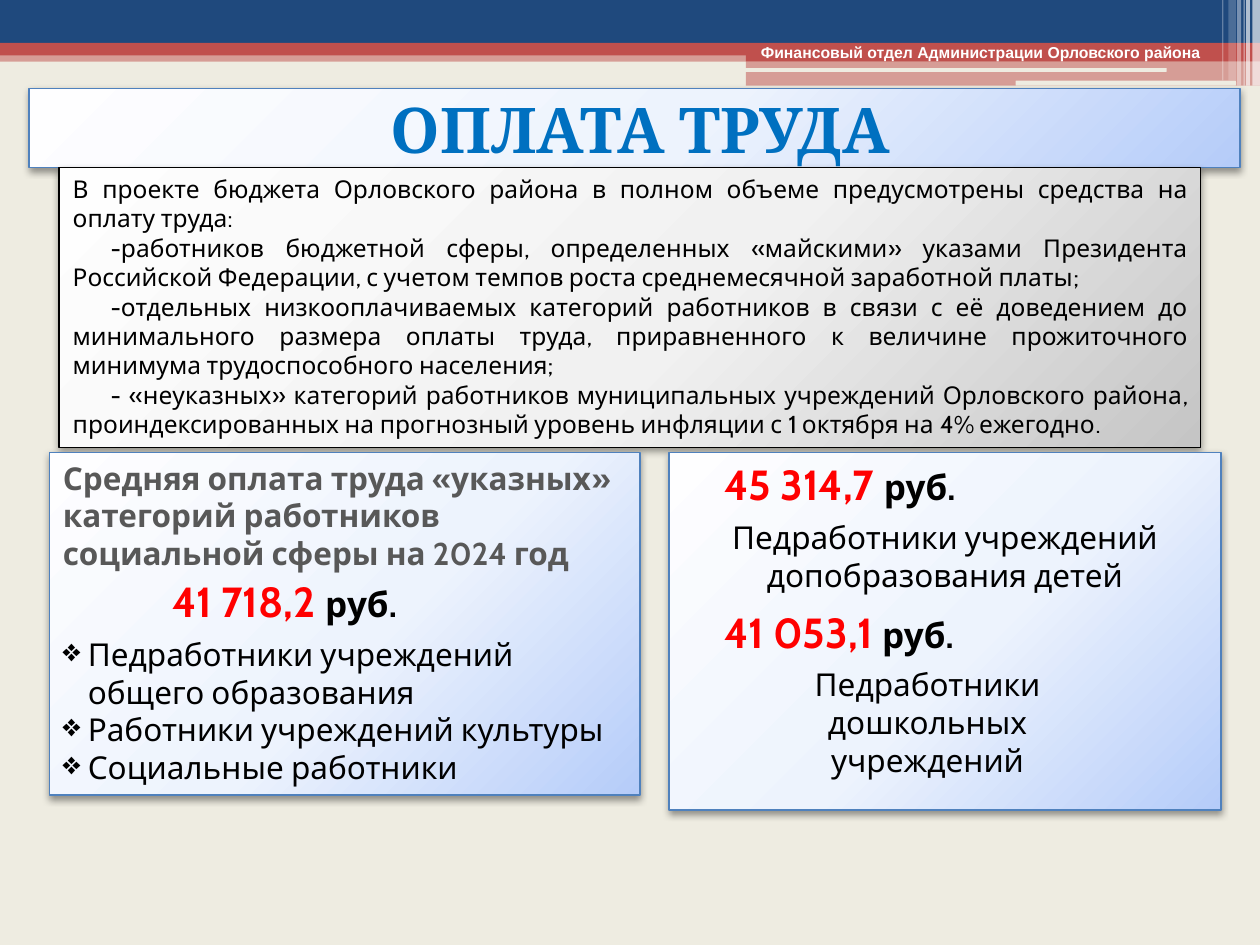
"""Build the slide on wages in the district budget."""
from lxml.etree import SubElement
from pptx import Presentation
from pptx.dml.color import RGBColor
from pptx.enum.shapes import MSO_SHAPE
from pptx.enum.text import MSO_ANCHOR, PP_ALIGN
from pptx.oxml import parse_xml
from pptx.oxml.ns import nsdecls, qn
from pptx.util import Pt

paint = RGBColor.from_string


def write(frame, text, size=18, color="000000", bold=False, font="Cabin",
          align=PP_ALIGN.LEFT, left=0, right=0, indent=0, before=0, bullet=None, tail=()):
    """Add a paragraph; tail holds further (text, size, color) spans."""
    para = frame.paragraphs[0] if not frame.text else frame.add_paragraph()
    para.alignment = align
    if before:
        para.space_before = Pt(before)
    props = para._p.get_or_add_pPr()
    for name, length in (("marL", left), ("marR", right), ("indent", indent)):
        props.set(name, str(Pt(length)))
    if bullet:
        SubElement(props, qn("a:buChar")).set("char", bullet)
    for words, points, shade in ((text, size, color), *tail):
        span = para.add_run()
        span.text = words
        span.font.name = font
        span.font.size = Pt(points)
        span.font.bold = bold
        span.font.color.rgb = paint(shade)


def add_panel(page, left, top, width, height, stops, outline):
    """Add a rectangle with a radial gradient and a soft shadow."""
    panel = page.shapes.add_shape(
        MSO_SHAPE.RECTANGLE, Pt(left), Pt(top), Pt(width), Pt(height))
    panel.line.color.rgb = paint(outline)
    panel.line.width = Pt(0.75)
    panel.shadow.inherit = False
    colors = "".join(
        f'<a:gs pos="{place * 1000}"><a:srgbClr val="{shade}"/></a:gs>'
        for place, shade in zip((0, 55, 100), stops))
    panel._element.spPr.find(qn("a:prstGeom")).addnext(parse_xml(
        f'<a:gradFill {nsdecls("a")} rotWithShape="1"><a:gsLst>{colors}</a:gsLst>'
        '<a:path path="circle"><a:fillToRect l="-40000" t="-90000" r="140000" b="190000"/>'
        '</a:path></a:gradFill>'))
    panel._element.spPr.find(qn("a:effectLst")).append(parse_xml(
        f'<a:outerShdw {nsdecls("a")} blurRad="{Pt(4.1)}" dist="{Pt(2)}" dir="5400000" '
        'rotWithShape="0"><a:srgbClr val="000000"><a:alpha val="40000"/></a:srgbClr>'
        '</a:outerShdw>'))
    frame = panel.text_frame
    frame.word_wrap = True
    frame.vertical_anchor = MSO_ANCHOR.TOP
    return frame


deck = Presentation()
deck.slide_width, deck.slide_height = Pt(720), Pt(540)
page = deck.slides.add_slide(deck.slide_layouts[6])
page.background.fill.solid()
page.background.fill.fore_color.rgb = paint("EEECE1")

plain, rounded = MSO_SHAPE.RECTANGLE, MSO_SHAPE.ROUNDED_RECTANGLE
bars = [
    (plain, 0, 28.8, 720, 6.5, "C0504D", 50),
    (plain, 0, 0, 720, 24.5, "1F497D", 100),
    (plain, 0, 24.5, 720, 7.2, "C0504D", 100),
    (plain, 426.2, 28, 293.8, 7, "C0504D", 100),
    (plain, 426.2, 34.6, 293.8, 14.4, "C0504D", 50),
    (rounded, 425.5, 38.9, 241.2, 2.2, "EEECE1", 100),
    (rounded, 580.3, 46.1, 126, 2.9, "EEECE1", 100),
    (plain, 715.7, 0, 4.3, 49, "FFFFFF", 65),
    (plain, 712.1, 0, 2.2, 49, "FFFFFF", 65),
    (plain, 710.6, 0, 0.7, 49, "FFFFFF", 60),
    (plain, 707, 0, 2.2, 49, "FFFFFF", 40),
    (plain, 702, 0, 4.3, 46, "FFFFFF", 20),
    (plain, 698.4, 0, 0.7, 46, "FFFFFF", 30),
]
for kind, left, top, width, height, shade, opacity in bars:
    bar = page.shapes.add_shape(kind, Pt(left), Pt(top), Pt(width), Pt(height))
    bar.fill.solid()
    bar.fill.fore_color.rgb = paint(shade)
    bar.line.fill.background()
    bar.shadow.inherit = False
    if opacity < 100:
        color = bar._element.spPr.find(qn("a:solidFill"))[0]
        SubElement(color, qn("a:alpha")).set("val", str(opacity * 1000))

box = page.shapes.add_textbox(Pt(427.7), Pt(20.9), Pt(281.5), Pt(18))
box.text_frame.word_wrap = True
write(box.text_frame, "Финансовый отдел Администрации Орловского района",
      size=9, color="FFFFFF", bold=True, font="Arial")

blue = ("FEFEFF", "EDF3FD", "B5CCF9")
gray = ("FEFEFE", "F1F1F1", "C5C5C5")

title = add_panel(page, 16.6, 50.4, 692, 45.4, blue, "4F81BD")
title.vertical_anchor = MSO_ANCHOR.MIDDLE
write(title, "ОПЛАТА ТРУДА", size=36, color="0070C0", bold=True, font="Cambria",
      align=PP_ALIGN.CENTER, left=6.5)

summary = add_panel(page, 33.8, 95.8, 652.3, 159.8, gray, "000000")
write(summary, "В проекте бюджета Орловского района в полном объеме предусмотрены "
      "средства на оплату труда:", size=14, align=PP_ALIGN.JUSTIFY, left=0.7)
for item in (
    "-работников бюджетной сферы, определенных «майскими» указами Президента Российской "
    "Федерации, с учетом темпов роста среднемесячной заработной платы;",
    "-отдельных низкооплачиваемых категорий работников в связи с её доведением до "
    "минимального размера оплаты труда, приравненного к величине прожиточного минимума "
    "трудоспособного населения;",
    "- «неуказных» категорий работников муниципальных учреждений Орловского района, "
    "проиндексированных на прогнозный уровень инфляции с 1 октября на 4% ежегодно.",
):
    write(summary, item, size=14, align=PP_ALIGN.JUSTIFY, left=0.7, indent=21.6)

rubles = [("руб.", 20, "000000")]
amount = dict(size=24, color="FF0000", bold=True, tail=rubles)

average = add_panel(page, 28.1, 258.5, 337.7, 195.8, blue, "4F81BD")
write(average, "Средняя оплата труда «указных» категорий работников социальной сферы "
      "на 2024 год", color="585858", bold=True, left=0.7)
write(average, "41 718,2 ", left=63.4, before=1.9, **amount)
for item, gap in (("Педработники учреждений общего образования", 5.2),
                  ("Работники учреждений культуры", 0),
                  ("Социальные работники", 0)):
    write(average, item, left=15, indent=-14.4, before=gap, bullet="❖")

teachers = add_panel(page, 382.3, 258.5, 315.4, 204.5, blue, "4F81BD")
write(teachers, "45 314,7 ", left=24.5, **amount)
write(teachers, "Педработники учреждений", align=PP_ALIGN.CENTER, before=5.3)
write(teachers, "допобразования детей", align=PP_ALIGN.CENTER)
write(teachers, "41 053,1 ", left=24.5, before=7.5, **amount)
write(teachers, "Педработники дошкольных учреждений", align=PP_ALIGN.CENTER,
      left=33, right=53, before=4.4)

deck.save("out.pptx")
